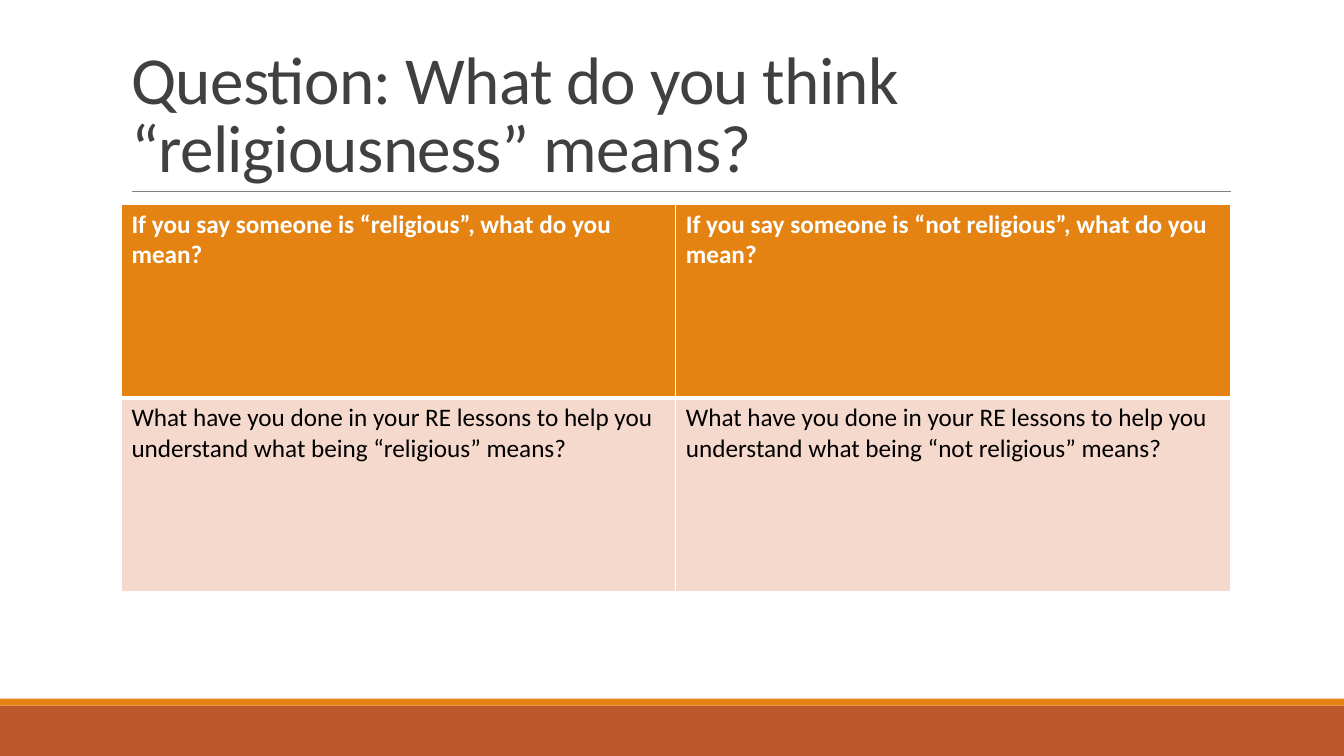
"""Builds a question slide with a two by two answer table."""
from lxml.etree import SubElement
from pptx import Presentation
from pptx.dml.color import RGBColor as Color
from pptx.enum.shapes import MSO_CONNECTOR as Link, MSO_SHAPE as Shape
from pptx.enum.text import MSO_ANCHOR as Anchor
from pptx.oxml import parse_xml
from pptx.oxml.ns import nsdecls, qn
from pptx.util import Pt

WIDE, HIGH = 960, 540
FONT = "Calibri"
TITLE = "Question: What do you think “religiousness” means?"
ROWS = [
    ("E48312", "FFFFFF", True, [
        "If you say someone is “religious”, what do you mean?",
        "If you say someone is “not religious”, what do you mean?"]),
    ("F5D9CC", "000000", False, [
        "What have you done in your RE lessons to help you understand what being “religious” means?",
        "What have you done in your RE lessons to help you understand what being “not religious” means?"]),
]
BANDS = [(504, 36, "BD582C"), (499, 5, "E48312")]
LEFT, SPAN = 86.75, 792
TOP, ROW = 145.75, 138.5


def paint(fill, tint):
    fill.solid()
    fill.fore_color.rgb = Color.from_string(tint)


def write(frame, text, size, tint, bold=False):
    para = frame.paragraphs[0]
    run = para.add_run()
    run.text = text
    run.font.name, run.font.size, run.font.bold = FONT, Pt(size), bold
    run.font.color.rgb = Color.from_string(tint)
    return para, run


def edge(cell, sides):
    props = cell._tc.get_or_add_tcPr()
    for i, (side, width) in enumerate(sides):
        props.insert(i, parse_xml(
            f'<a:ln{side} {nsdecls("a")} w="{Pt(width)}"><a:solidFill>'
            f'<a:srgbClr val="FFFFFF"/></a:solidFill></a:ln{side}>'))


def main():
    deck = Presentation()
    deck.slide_width, deck.slide_height = Pt(WIDE), Pt(HIGH)
    slide = deck.slides.add_slide(deck.slide_layouts[6])
    shapes = slide.shapes

    for top, high, tint in BANDS:
        band = shapes.add_shape(Shape.RECTANGLE, 0, Pt(top), Pt(WIDE), Pt(high))
        band.shadow.inherit = False
        paint(band.fill, tint)
        band.line.fill.background()

    rule = shapes.add_connector(Link.STRAIGHT, Pt(94), Pt(136.75), Pt(879), Pt(136.75))
    rule.line.width = Pt(0.5)
    rule.line.color.rgb = Color.from_string("808080")
    SubElement(rule._element.spPr, qn("a:effectLst"))

    frame = shapes.add_textbox(Pt(LEFT), Pt(22.5), Pt(SPAN), Pt(114.25)).text_frame
    frame.word_wrap = True
    frame.vertical_anchor = Anchor.BOTTOM
    para, run = write(frame, TITLE, 48, "404040")
    para.line_spacing = 0.85
    run.font._element.set("spc", "-50")

    grid = shapes.add_table(len(ROWS), 2, Pt(LEFT), Pt(TOP), Pt(SPAN), Pt(ROW * len(ROWS))).table
    for r, (back, ink, bold, texts) in enumerate(ROWS):
        grid.rows[r].height = Pt(ROW)
        for c, text in enumerate(texts):
            cell = grid.cell(r, c)
            paint(cell.fill, back)
            write(cell.text_frame, text, 18, ink, bold)
            over, under = (1, 3) if r == 0 else (3, 1)
            edge(cell, [("L", 1), ("R", 1), ("T", over), ("B", under)])

    deck.save("out.pptx")


if __name__ == "__main__":
    main()
